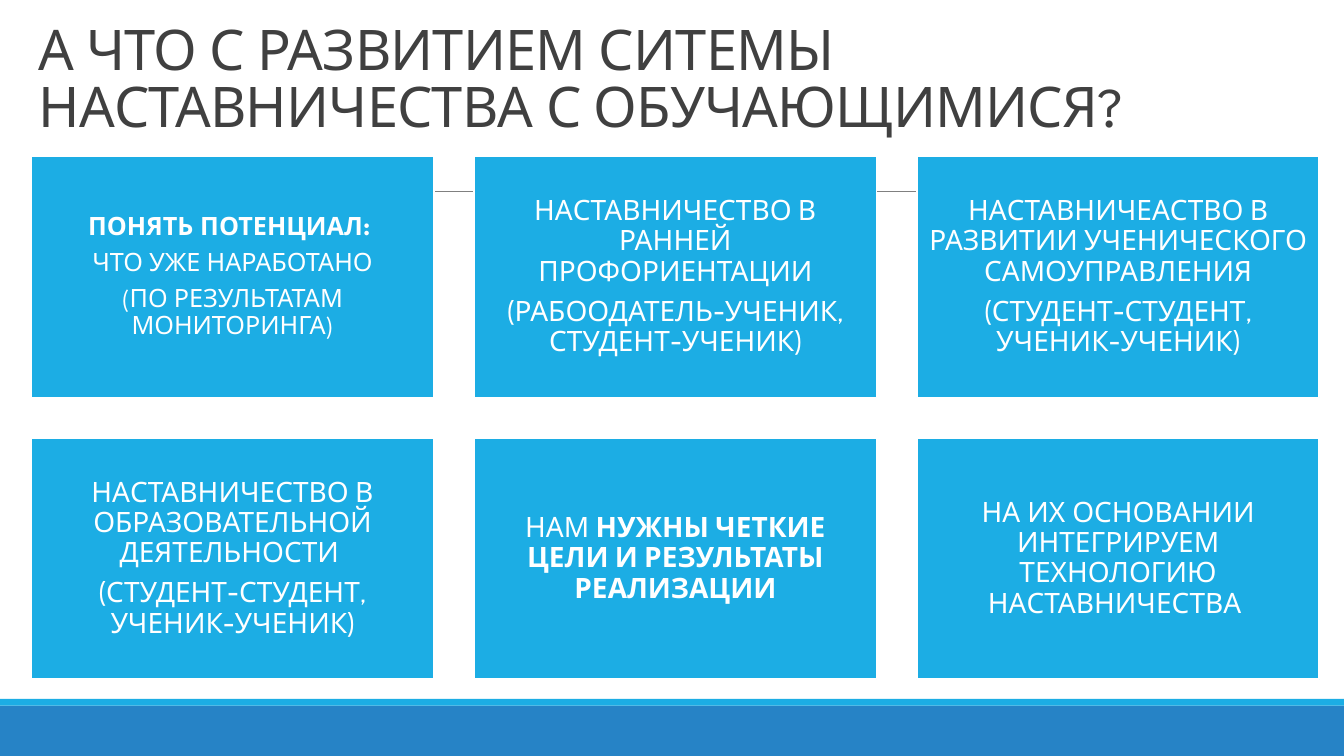
from pptx import Presentation
from pptx.dml.color import RGBColor
from pptx.enum.shapes import MSO_CONNECTOR, MSO_SHAPE
from pptx.enum.text import MSO_ANCHOR as Anchor, MSO_AUTO_SIZE as AutoSize, PP_ALIGN as Align
from pptx.oxml.ns import qn
from pptx.util import Cm, Pt

SPARTAN, CABIN = "League Spartan", "Cabin"
SKY = RGBColor(0x1C, 0xAD, 0xE4)
BLUE = RGBColor(0x26, 0x83, 0xC6)
GRAY = RGBColor(0x80, 0x80, 0x80)
DARK = RGBColor(0x40, 0x40, 0x40)
WHITE = RGBColor(0xFF, 0xFF, 0xFF)

TITLE = "А ЧТО С РАЗВИТИЕМ СИТЕМЫ НАСТАВНИЧЕСТВА С ОБУЧАЮЩИМИСЯ?"
# Each card: font, size, paragraphs; a paragraph is a list of (text, bold)
CARDS = [
    (SPARTAN, 18, [[("ПОНЯТЬ ПОТЕНЦИАЛ: ", True)],
                   [("ЧТО УЖЕ НАРАБОТАНО", False)],
                   [("(ПО РЕЗУЛЬТАТАМ МОНИТОРИНГА)", False)]]),
    (CABIN, 20, [[("НАСТАВНИЧЕСТВО В РАННЕЙ ПРОФОРИЕНТАЦИИ", False)],
                 [("(РАБООДАТЕЛЬ-УЧЕНИК, СТУДЕНТ-УЧЕНИК)", False)]]),
    (CABIN, 20, [[("НАСТАВНИЧЕАСТВО В РАЗВИТИИ УЧЕНИЧЕСКОГО САМОУПРАВЛЕНИЯ", False)],
                 [("(СТУДЕНТ-СТУДЕНТ, УЧЕНИК-УЧЕНИК)", False)]]),
    (CABIN, 20, [[("НАСТАВНИЧЕСТВО В ОБРАЗОВАТЕЛЬНОЙ ДЕЯТЕЛЬНОСТИ ", False)],
                 [("(СТУДЕНТ-СТУДЕНТ, УЧЕНИК-УЧЕНИК)", False)]]),
    (CABIN, 20, [[("НАМ ", False),
                  ("НУЖНЫ ЧЕТКИЕ ЦЕЛИ И РЕЗУЛЬТАТЫ РЕАЛИЗАЦИИ", True)]]),
    (SPARTAN, 20, [[("НА ИХ ОСНОВАНИИ ИНТЕГРИРУЕМ ТЕХНОЛОГИЮ НАСТАВНИЧЕСТВА ", False)]]),
]

PAGE_WIDTH, PAGE_HEIGHT = 33.87, 19.05
COLUMNS = 3
CARD_LEFT, CARD_TOP, CARD_WIDTH, CARD_HEIGHT, CARD_GAP = 0.79, 3.94, 10.14, 6.08, 1.02
FOOTER_TOP, STRIPE_HEIGHT = 17.78, 0.17


def write(shape, paragraphs, *, font, size, color, align, anchor, spacing,
          after=0, inset=None, tracking=None):
    frame = shape.text_frame
    frame.word_wrap = True
    frame.auto_size = AutoSize.NONE
    frame.vertical_anchor = anchor
    if inset is not None:
        frame.margin_left = frame.margin_right = Cm(inset)
        frame.margin_top = frame.margin_bottom = Cm(inset)
    for index, spans in enumerate(paragraphs):
        para = frame.paragraphs[0] if index == 0 else frame.add_paragraph()
        para.alignment = align
        para.line_spacing = spacing
        para.space_before = Pt(0)
        para.space_after = Pt(after)
        for text, bold in spans:
            span = para.add_run()
            span.text = text
            span.font.name = font
            span.font.size = Pt(size)
            span.font.bold = bold
            span.font.color.rgb = color
            if tracking is not None:
                span.font._element.set("spc", str(round(tracking * 100)))


def add_box(page, left, top, width, height, fill, outline=None):
    box = page.shapes.add_shape(MSO_SHAPE.RECTANGLE, Cm(left), Cm(top), Cm(width), Cm(height))
    box.shadow.inherit = False
    box.fill.solid()
    box.fill.fore_color.rgb = fill
    if outline is None:
        box.line.fill.background()
    else:
        box.line.color.rgb = outline
        box.line.width = Pt(1.25)
    return box


def add_rule(page, left, right, top):
    rule = page.shapes.add_connector(MSO_CONNECTOR.STRAIGHT, Cm(left), Cm(top), Cm(right), Cm(top))
    rule.line.color.rgb = GRAY
    rule.line.width = Pt(0.5)
    properties = rule._element.spPr
    properties.append(properties.makeelement(qn("a:effectLst"), {}))


def main():
    deck = Presentation()
    deck.slide_width, deck.slide_height = Cm(PAGE_WIDTH), Cm(PAGE_HEIGHT)
    page = deck.slides.add_slide(deck.slide_layouts[5])

    add_box(page, 0, FOOTER_TOP, PAGE_WIDTH, PAGE_HEIGHT - FOOTER_TOP, BLUE)
    add_box(page, 0, FOOTER_TOP - STRIPE_HEIGHT, PAGE_WIDTH, STRIPE_HEIGHT, SKY)
    add_rule(page, 3.33, 30.99, 4.82)

    title = page.shapes.title
    title.left, title.top, title.width, title.height = Cm(0.71), Cm(-0.41), Cm(32.61), Cm(4.04)
    write(title, [[(TITLE, False)]], font=SPARTAN, size=40, color=DARK, align=Align.LEFT,
          anchor=Anchor.BOTTOM, spacing=0.85, tracking=-0.5)

    for index, (font, size, paragraphs) in enumerate(CARDS):
        row, column = divmod(index, COLUMNS)
        card = add_box(page, CARD_LEFT + column * (CARD_WIDTH + CARD_GAP),
                       CARD_TOP + row * (CARD_HEIGHT + CARD_GAP),
                       CARD_WIDTH, CARD_HEIGHT, SKY, outline=WHITE)
        write(card, paragraphs, font=font, size=size, color=WHITE, align=Align.CENTER,
              anchor=Anchor.MIDDLE, spacing=0.9, after=size * 0.35, inset=size * 0.01)

    deck.save("out.pptx")


if __name__ == "__main__":
    main()
